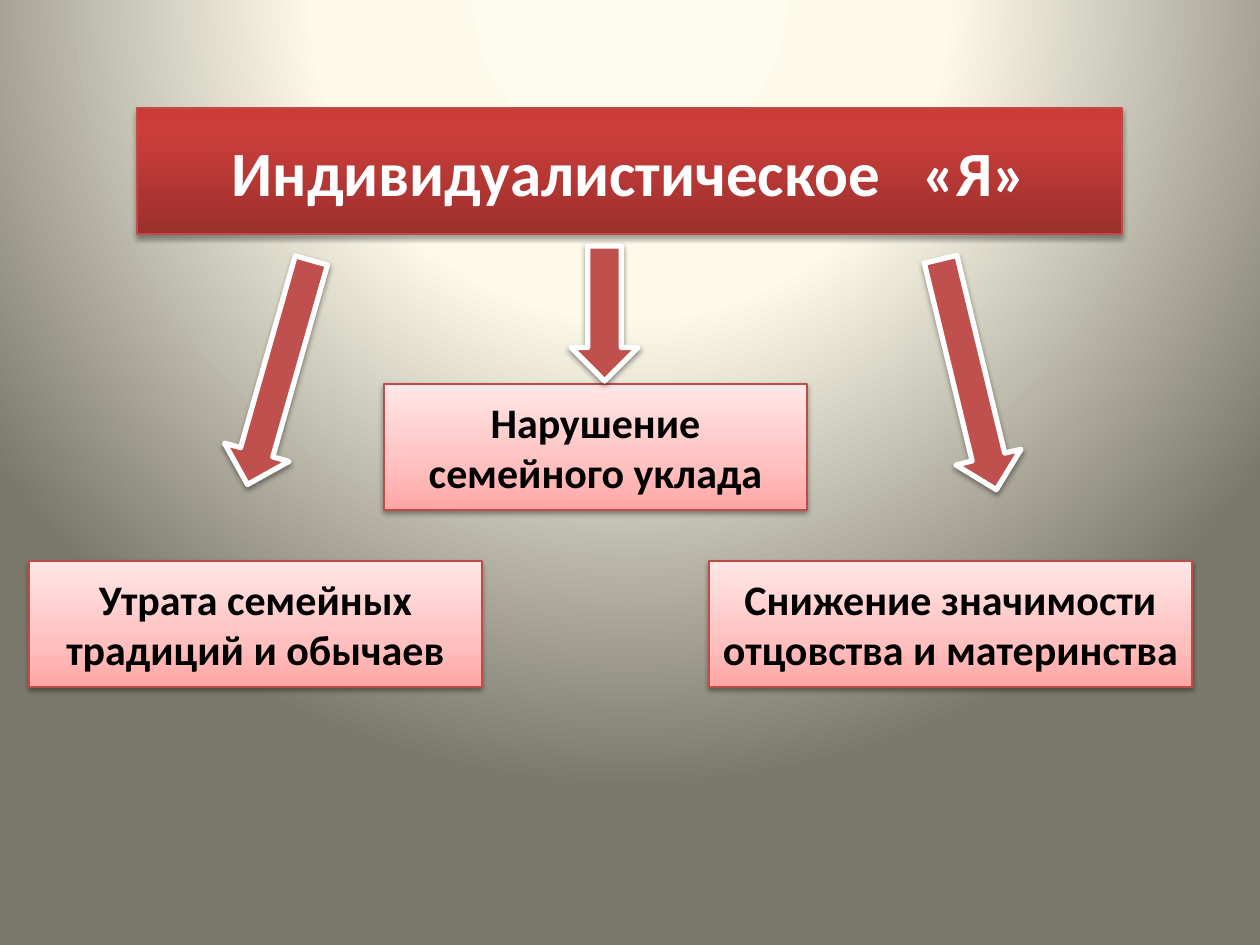
import pptx
import pptx.dml.color
import pptx.enum.shapes
import pptx.enum.text
import pptx.oxml
import pptx.oxml.ns
import pptx.util

EMU_PER_PX = 914400 / 126
COLORS = {
    "text": "000000", "light": "FFFFFF", "shadow": "000000",
    "border": "BF4C48", "arrow": "C0504D",
    "glow": "FEFCEE", "cream": "FDFAEA", "olive": "7B796B",
    "dark_red": "9C2F2D", "red": "CB3E3A", "bright_red": "CE3B37",
    "rose": "FFA6A5", "pink": "FFC0BF", "pale_pink": "FFE7E7",
}
BACKDROP = [(0, "glow"), (40, "cream"), (100, "olive")]
BANNER = [(0, "dark_red"), (80, "red"), (100, "bright_red")]
CARD = [(0, "rose"), (35, "pink"), (100, "pale_pink")]
UPWARD = '<a:lin ang="16200000" scaled="0"/>'
FROM_ABOVE = ('<a:path path="circle"><a:fillToRect l="50000" t="-80000" '
              'r="50000" b="180000"/></a:path>')


def px(length):
    return pptx.util.Emu(round(length * EMU_PER_PX))


def rgb(name):
    return pptx.dml.color.RGBColor.from_string(COLORS[name])


def drawing_xml(tag, content):
    namespace = pptx.oxml.ns.nsdecls("a")
    return pptx.oxml.parse_xml(f"<a:{tag} {namespace}>{content}</a:{tag}>")


def child(element, tag):
    return next(element.iter(pptx.oxml.ns.qn(tag)))


def paint_gradient(fill, element, stops, direction):
    """Give the fill, held in element, its stops (percent, colour name)."""
    fill.gradient()
    old = child(element, "a:gradFill")
    stop_xml = "".join(
        f'<a:gs pos="{percent * 1000}"><a:srgbClr val="{COLORS[name]}"/></a:gs>'
        for percent, name in stops)
    new = drawing_xml("gradFill", f"<a:gsLst>{stop_xml}</a:gsLst>{direction}")
    old.getparent().replace(old, new)


def write(shape, text, size, color="text", bold=True, font="Calibri"):
    frame = shape.text_frame
    frame.word_wrap = True
    frame.auto_size = pptx.enum.text.MSO_AUTO_SIZE.NONE
    frame.vertical_anchor = pptx.enum.text.MSO_ANCHOR.MIDDLE
    paragraph = frame.paragraphs[0]
    paragraph.alignment = pptx.enum.text.PP_ALIGN.CENTER
    run = paragraph.add_run()
    run.text = text
    run.font.name = font
    run.font.size = pptx.util.Pt(size)
    run.font.bold = bold
    run.font.color.rgb = rgb(color)


class Diagram:
    """The current slide and the look its elements share."""

    card_height = 126
    arrow_width = 67

    def __init__(self, slide):
        self.slide = slide
        paint_gradient(slide.background.fill, slide.element, BACKDROP, FROM_ABOVE)

    def outline(self, shape, color, width, distance=1.6, opacity=38):
        """Set the border and the soft shadow below the shape."""
        shape.line.color.rgb = rgb(color)
        shape.line.width = pptx.util.Pt(width)
        shape.shadow.inherit = False
        blur, offset = pptx.util.Pt(3.1), pptx.util.Pt(distance)
        effects = child(shape.element, "a:effectLst")
        shadow = drawing_xml("effectLst", (
            f'<a:outerShdw blurRad="{blur}" dist="{offset}" dir="5400000" '
            f'rotWithShape="0"><a:srgbClr val="{COLORS["shadow"]}">'
            f'<a:alpha val="{opacity * 1000}"/></a:srgbClr></a:outerShdw>'))
        effects.getparent().replace(effects, shadow)

    def add(self, preset, left, top, width, height):
        return self.slide.shapes.add_shape(
            preset, px(left), px(top), px(width), px(height))

    def banner(self, text, left, top, width):
        title = self.slide.shapes.title
        title.left, title.top = px(left), px(top)
        title.width, title.height = px(width), px(self.card_height)
        paint_gradient(title.fill, title.element, BANNER, UPWARD)
        self.outline(title, "border", 0.75, distance=1.8, opacity=35)
        write(title, text, size=36, color="light")

    def card(self, text, left, top, width):
        card = self.add(pptx.enum.shapes.MSO_SHAPE.RECTANGLE,
                        left, top, width, self.card_height)
        paint_gradient(card.fill, card.element, CARD, UPWARD)
        self.outline(card, "border", 0.75)
        write(card, text, size=24)

    def arrow(self, left, top, height, rotation):
        arrow = self.add(pptx.enum.shapes.MSO_SHAPE.DOWN_ARROW,
                         left, top, self.arrow_width, height)
        arrow.rotation = rotation
        arrow.fill.solid()
        arrow.fill.fore_color.rgb = rgb("arrow")
        self.outline(arrow, "light", 3)


def main():
    deck = pptx.Presentation()
    deck.slide_width, deck.slide_height = px(1260), px(945)
    title_only = deck.slide_layouts[5]
    diagram = Diagram(deck.slides.add_slide(title_only))

    diagram.banner("Индивидуалистическое   «Я»", 137, 108, 985)
    for consequence in (
        ("Утрата семейных традиций и обычаев", 29, 561, 453),
        ("Нарушение семейного уклада", 384, 384, 423),
        ("Снижение значимости отцовства и материнства", 709, 561, 483),
    ):
        diagram.card(*consequence)
    for left, top, height, rotation in (
        (246, 256, 233, 15.9),
        (571, 246, 135, 0),
        (935, 256, 237, -13.6),
    ):
        diagram.arrow(left, top, height, rotation)

    deck.save("out.pptx")


if __name__ == "__main__":
    main()
